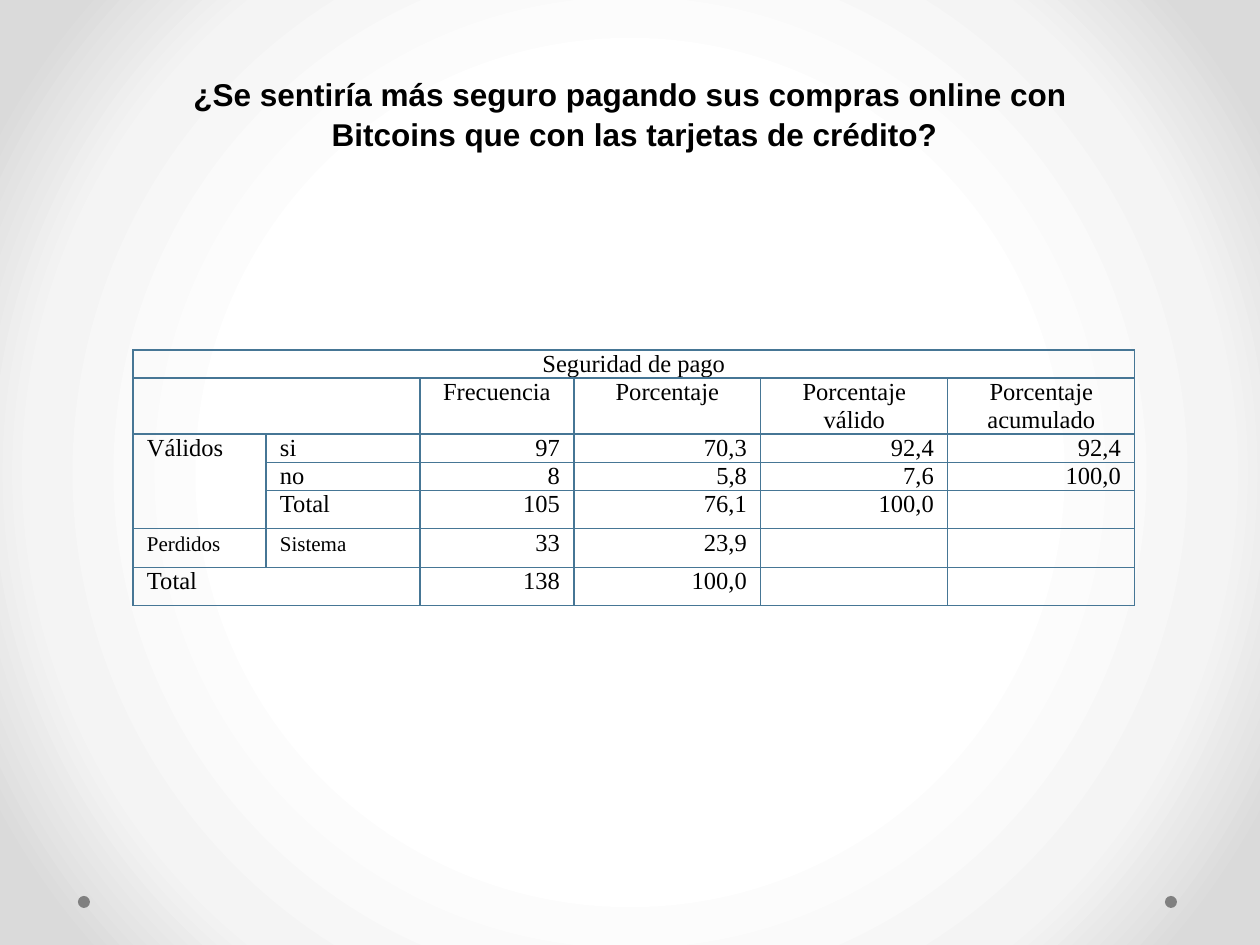
"""Build the payment security survey slide with its frequency table."""
from lxml import etree
from pptx import Presentation
from pptx import util as u
from pptx.dml.color import RGBColor
from pptx.enum import shapes, text
from pptx.oxml import parse_xml
from pptx.oxml.ns import nsdecls, qn

PX = u.Inches(1) / 126
BLACK = RGBColor(0x00, 0x00, 0x00)
DOT_GRAY = RGBColor(0x80, 0x80, 0x80)
BORDER_BLUE = RGBColor(0x46, 0x76, 0x95)
BACKDROP = ((50, RGBColor(0xFF, 0xFF, 0xFF)),
            (76, RGBColor(0xF4, 0xF4, 0xF4)),
            (92, RGBColor(0xDA, 0xDA, 0xDA)))

QUESTION = ("¿Se sentiría más seguro pagando sus compras online con ",
            "Bitcoins que con las tarjetas de crédito?")
COLUMN_WIDTHS = (133, 154, 154, 187, 187, 187)
ROW_HEIGHTS = (28, 56, 28, 28, 31, 31, 31)
HEADER_ROWS = 2
LABEL_COLUMNS = 2
SMALL_LABELS = ("Perdidos", "Sistema")
FREQUENCIES = (
    ("Seguridad de pago", "", "", "", "", ""),
    ("", "", "Frecuencia", "Porcentaje", "Porcentaje válido", "Porcentaje acumulado"),
    ("Válidos", "si", "97", "70,3", "92,4", "92,4"),
    ("", "no", "8", "5,8", "7,6", "100,0"),
    ("", "Total", "105", "76,1", "100,0", ""),
    ("Perdidos", "Sistema", "33", "23,9", "", ""),
    ("Total", "", "138", "100,0", "", ""),
)
MERGES = (((0, 0), (0, 5)), ((1, 0), (1, 1)), ((2, 0), (4, 0)), ((6, 0), (6, 1)))


def px(length):
    """Turn pixels into EMU."""
    return u.Emu(round(length * PX))


def add_run(paragraph, words, font_name, size, bold=False):
    """Append one formatted black run."""
    run = paragraph.add_run()
    run.text = words
    run.font.name = font_name
    run.font.size = u.Pt(size)
    run.font.bold = bold
    run.font.color.rgb = BLACK


def set_backdrop(slide):
    """Fill the background with a circular gradient."""
    slide.background.fill.solid()
    stops = "".join(
        f'<a:gs pos="{position * 1000}"><a:srgbClr val="{color}"/></a:gs>'
        for position, color in BACKDROP)
    gradient = parse_xml(
        f'<a:gradFill {nsdecls("a")} rotWithShape="1"><a:gsLst>{stops}</a:gsLst>'
        '<a:path path="circle"><a:fillToRect l="50000" t="50000" r="50000" b="50000"/>'
        '</a:path></a:gradFill>')
    solid = next(slide.background._cSld.iter(qn("a:solidFill")))
    solid.getparent().replace(solid, gradient)


def add_dot(slide, left):
    """Draw one decorative dot near the bottom edge."""
    dot = slide.shapes.add_shape(
        shapes.MSO_SHAPE.OVAL, px(left), px(896), px(12), px(12))
    dot.shadow.inherit = False
    dot.fill.solid()
    dot.fill.fore_color.rgb = DOT_GRAY
    dot.line.fill.background()


def write_question(slide):
    """Place the question in the title placeholder."""
    title = slide.shapes.title
    title.left, title.top, title.width, title.height = map(px, (44, 67, 1181, 160))
    frame = title.text_frame
    frame.word_wrap = True
    frame.auto_size = text.MSO_AUTO_SIZE.NONE
    frame.vertical_anchor = text.MSO_ANCHOR.MIDDLE
    frame.margin_left = frame.margin_right = px(13)
    frame.margin_top, frame.margin_bottom = px(6), px(74)
    for index, line in enumerate(QUESTION):
        paragraph = frame.add_paragraph() if index else frame.paragraphs[0]
        paragraph.alignment = text.PP_ALIGN.CENTER
        paragraph.line_spacing = 1.05
        add_run(paragraph, line, "Arial", 18, bold=True)


def set_borders(cell):
    """Outline all four sides of a cell."""
    properties = cell._tc.get_or_add_tcPr()
    for index, side in enumerate(("lnL", "lnR", "lnT", "lnB")):
        line = etree.Element(qn(f"a:{side}"), w=str(u.Pt(0.75)))
        fill = etree.SubElement(line, qn("a:solidFill"))
        etree.SubElement(fill, qn("a:srgbClr"), val=str(BORDER_BLUE))
        properties.insert(index, line)


def cell_alignment(row, column):
    """Centre headings, left-align labels and right-align figures."""
    if row < HEADER_ROWS:
        return text.PP_ALIGN.CENTER
    return text.PP_ALIGN.LEFT if column < LABEL_COLUMNS else text.PP_ALIGN.RIGHT


def write_cell(cell, words, alignment):
    """Format a cell and write its words."""
    cell.fill.background()
    set_borders(cell)
    cell.margin_left = cell.margin_right = px(9)
    cell.margin_top = cell.margin_bottom = 0
    paragraph = cell.text_frame.paragraphs[0]
    paragraph.alignment = alignment
    paragraph.line_spacing = u.Pt(16)
    indents = paragraph._p.get_or_add_pPr()
    for side in ("marL", "marR"):
        indents.set(side, str(px(5)))
    if words:
        size = 12 if words in SMALL_LABELS else 14
        add_run(paragraph, words, "Times New Roman", size)


def add_frequency_table(slide):
    """Add the table of answers."""
    frame = slide.shapes.add_table(
        len(ROW_HEIGHTS), len(COLUMN_WIDTHS), px(133), px(350),
        px(sum(COLUMN_WIDTHS)), px(sum(ROW_HEIGHTS)))
    table = frame.table
    table.first_row = table.horz_banding = False
    for column, width in zip(table.columns, COLUMN_WIDTHS):
        column.width = px(width)
    for row, height in zip(table.rows, ROW_HEIGHTS):
        row.height = px(height)
    for start, end in MERGES:
        table.cell(*start).merge(table.cell(*end))
    for row, answers in enumerate(FREQUENCIES):
        for column, words in enumerate(answers):
            write_cell(table.cell(row, column), words, cell_alignment(row, column))


def main():
    """Build and save the slide."""
    deck = Presentation()
    deck.slide_width, deck.slide_height = px(1260), px(945)
    slide = deck.slides.add_slide(deck.slide_layouts[5])
    set_backdrop(slide)
    for left in (1165, 78):
        add_dot(slide, left)
    add_frequency_table(slide)
    write_question(slide)
    deck.save("out.pptx")


if __name__ == "__main__":
    main()
